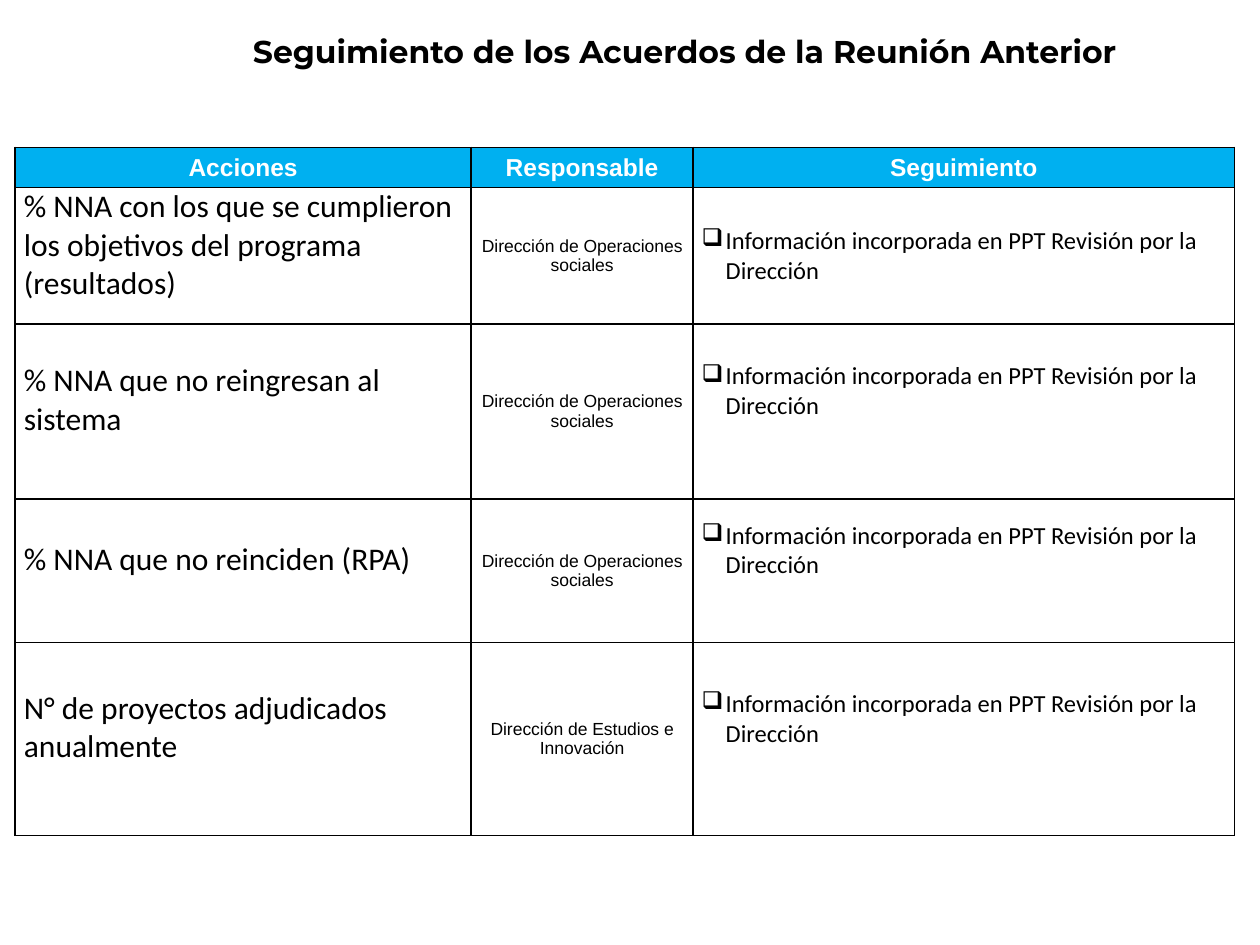
from lxml.etree import SubElement
from pptx import Presentation
from pptx.dml.color import RGBColor
from pptx.enum.text import MSO_ANCHOR, PP_ALIGN
from pptx.oxml.ns import qn
from pptx.util import Inches, Pt

# Content
TITLE = "Seguimiento de los Acuerdos de la Reunión Anterior"
HEADERS = ["Acciones", "Responsable", "Seguimiento"]
SOCIAL = "Dirección de Operaciones sociales"
STATUS = "Información incorporada en PPT Revisión por la Dirección"
ACTIONS = [
    ("% NNA con los que se cumplieron los objetivos del programa (resultados)", SOCIAL),
    ("% NNA que no reingresan al sistema", SOCIAL),
    ("% NNA que no reinciden (RPA)", SOCIAL),
    ("N° de proyectos adjudicados anualmente", "Dirección de Estudios e Innovación"),
]

# Theme and grid (inches)
THEME = dict(black="000000", white="FFFFFF", header="00B0F0", border=1)
TITLE_STYLE = dict(font="Montserrat", size=18, bold=True, align=PP_ALIGN.CENTER)
HEADER_STYLE = dict(font="Arial", size=14, bold=True, color=THEME["white"],
                    align=PP_ALIGN.CENTER)
COLUMN_STYLES = [
    dict(font="Calibri", size=18),
    dict(font="Arial", size=10, align=PP_ALIGN.CENTER),
    dict(font="Calibri", size=14, bullet="❑", after=6),
]
COLS = [3.62, 1.76, 4.3]
ROWS = [0.32, 1.07, 1.39, 1.14, 1.53]
LEFT, TOP = 0.12, 1.17
ACTION_LIFT, STATUS_LIFT = 0.18, 0.32


def write(tf, text, font, size, bold=False, color=THEME["black"],
          align=PP_ALIGN.LEFT, bullet=None, after=0):
    p = tf.paragraphs[0]
    p.alignment = align
    p.space_after = Pt(after)
    if bullet:
        pPr = p._p.get_or_add_pPr()
        pPr.set("marL", str(Inches(0.19)))
        pPr.set("indent", str(-Inches(0.19)))
        clr = SubElement(pPr, qn("a:buClr"))
        SubElement(clr, qn("a:srgbClr"), val=THEME["black"])
        SubElement(pPr, qn("a:buChar"), char=bullet)
    r = p.add_run()
    r.text = text
    r.font.name, r.font.size, r.font.bold = font, Pt(size), bold
    r.font.color.rgb = RGBColor.from_string(color)


def format_cell(cell, fill, side, bottom=0):
    cell.vertical_anchor = MSO_ANCHOR.MIDDLE
    cell.margin_left = cell.margin_right = Inches(side)
    cell.margin_top, cell.margin_bottom = 0, Inches(bottom)
    tcPr = cell._tc.get_or_add_tcPr()
    # Borders come before the fill in a cell's properties
    for edge in ("a:lnL", "a:lnR", "a:lnT", "a:lnB"):
        ln = SubElement(tcPr, qn(edge), w=str(Pt(THEME["border"])))
        line_fill = SubElement(ln, qn("a:solidFill"))
        SubElement(line_fill, qn("a:srgbClr"), val=THEME["black"])
    cell.fill.solid()
    cell.fill.fore_color.rgb = RGBColor.from_string(fill)


prs = Presentation()
prs.slide_width, prs.slide_height = Inches(10), Inches(7.5)
s = prs.slides.add_slide(prs.slide_layouts[6])

# Title
box = s.shapes.add_textbox(Inches(1.38), 0, Inches(8.11), Inches(0.81))
tf = box.text_frame
tf.word_wrap = True
tf.vertical_anchor = MSO_ANCHOR.MIDDLE
write(tf, TITLE, **TITLE_STYLE)

# Follow-up table
table = s.shapes.add_table(len(ROWS), len(COLS), Inches(LEFT), Inches(TOP),
                           Inches(sum(COLS)), Inches(sum(ROWS))).table
for column, width in zip(table.columns, COLS):
    column.width = Inches(width)
for row, height in zip(table.rows, ROWS):
    row.height = Inches(height)

for c, header in enumerate(HEADERS):
    cell = table.cell(0, c)
    format_cell(cell, THEME["header"], 0.03)
    write(cell.text_frame, header, **HEADER_STYLE)

for i, (action, owner) in enumerate(ACTIONS, start=1):
    lifts = [ACTION_LIFT, 0, STATUS_LIFT if i > 1 else 0]
    for c, text in enumerate([action, owner, STATUS]):
        cell = table.cell(i, c)
        format_cell(cell, THEME["white"], 0.07, lifts[c])
        write(cell.text_frame, text, **COLUMN_STYLES[c])

prs.save("out.pptx")
